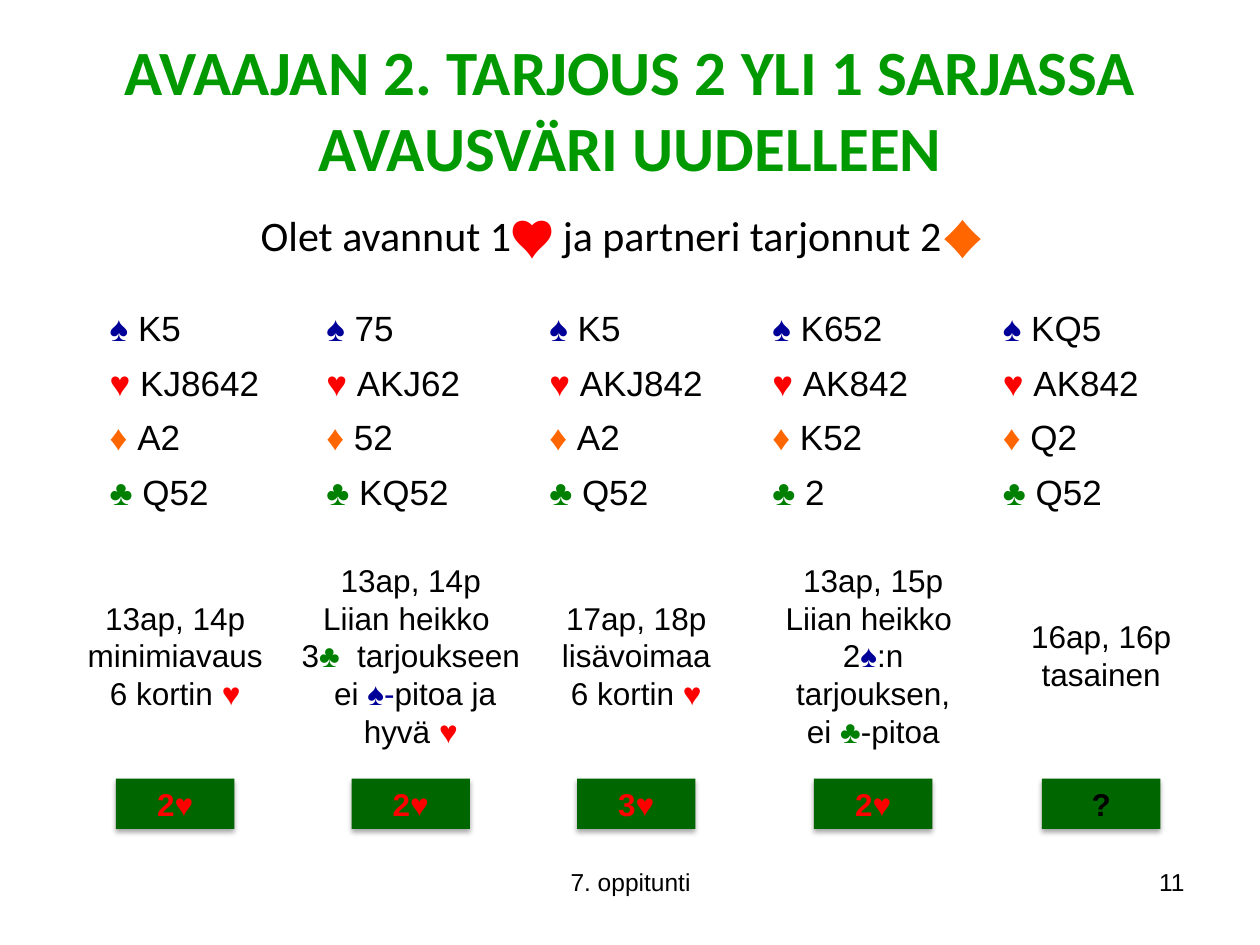
from lxml import etree
from pptx import Presentation
from pptx.dml.color import RGBColor
from pptx.enum.shapes import MSO_SHAPE
from pptx.enum.text import MSO_ANCHOR, PP_ALIGN
from pptx.oxml import parse_xml
from pptx.oxml.ns import nsdecls
from pptx.util import Inches, Pt

BLACK = RGBColor(0x00, 0x00, 0x00)
TITLE_GREEN = RGBColor(0x00, 0x99, 0x00)
BID_GREEN = RGBColor(0x00, 0x66, 0x00)
RED = RGBColor(0xFF, 0x00, 0x00)
SUIT_COLORS = {
    "♠": RGBColor(0x00, 0x00, 0x99),
    "♥": RED,
    "♦": RGBColor(0xFF, 0x66, 0x00),
    "♣": RGBColor(0x00, 0x80, 0x00),
}
BREAK = "\n"

COLUMN_WIDTHS = [1.72, 1.77, 1.77, 1.83, 1.8]
ROW_HEIGHT = 0.43

# One entry per hand: holdings by suit, centre, note width, note, bid
HANDS = [
    (["K5", "KJ8642", "A2", "Q52"], 1.39, 1.61,
     [["13ap, 14p"], ["minimiavaus"], ["6 kortin ", "♥"]], "2♥"),
    (["75", "AKJ62", "52", "KQ52"], 3.26, 2.05,
     [["13ap, 14p"],
      ["Liian heikko ", BREAK, "3", "♣  ", "tarjoukseen"],
      [" ei ", "♠-", "pitoa ja hyvä ", "♥"]], "2♥"),
    (["K5", "AKJ842", "A2", "Q52"], 5.05, 1.61,
     [["17ap, 18p"], ["lisävoimaa"], ["6 kortin ", "♥"]], "3♥"),
    (["K652", "AK842", "K52", "2"], 6.93, 1.61,
     [["13ap, 15p"],
      ["Liian heikko ", BREAK, "2", "♠", ":n tarjouksen,", BREAK,
       "ei ", "♣", "-pitoa"]], "2♥"),
    (["KQ5", "AK842", "Q2", "Q52"], 8.74, 1.61,
     [["16ap, 16p"], ["tasainen"]], "?"),
]


def write(frame, paragraphs, size, font="Arial", color=BLACK, bold=False,
          align=PP_ALIGN.CENTER):
    """Write runs; a run that starts with a suit takes the suit's colour."""
    for index, pieces in enumerate(paragraphs):
        paragraph = frame.add_paragraph() if index else frame.paragraphs[0]
        paragraph.alignment = align
        for piece in pieces:
            if piece == BREAK:
                paragraph.add_line_break()
                continue
            run = paragraph.add_run()
            run.text = piece
            run.font.name = font
            run.font.size = Pt(size)
            run.font.bold = bold
            run.font.color.rgb = SUIT_COLORS.get(piece[0], color)


def add_text(slide, left, top, width, height, paragraphs, size,
             anchor=MSO_ANCHOR.TOP, **style):
    frame = slide.shapes.add_textbox(
        Inches(left), Inches(top), Inches(width), Inches(height)).text_frame
    frame.word_wrap = True
    frame.vertical_anchor = anchor
    write(frame, paragraphs, size, **style)


def add_heading(slide, left, top, width):
    add_text(slide, left, top, width, 1.31,
             [["AVAAJAN 2. TARJOUS 2 YLI 1 SARJASSA AVAUSVÄRI UUDELLEEN"]],
             36, font="Calibri", color=TITLE_GREEN, bold=True)
    add_text(slide, left + 1.38, top + 1.4, 6.38, 0.5,
             [["Olet avannut 1", "♥", " ja partneri tarjonnut 2", "♦"]],
             24, font="Calibri", align=PP_ALIGN.LEFT)


def add_hands(slide, left, top):
    hands = slide.shapes.add_table(
        len(SUIT_COLORS), len(HANDS), Inches(left), Inches(top),
        Inches(sum(COLUMN_WIDTHS)), Inches(ROW_HEIGHT * len(SUIT_COLORS))).table
    hands.first_row = hands.horz_banding = False
    for column, width in zip(hands.columns, COLUMN_WIDTHS):
        column.width = Inches(width)
    for row_index, suit in enumerate(SUIT_COLORS):
        hands.rows[row_index].height = Inches(ROW_HEIGHT)
        for column_index, (holdings, *_) in enumerate(HANDS):
            cell = hands.cell(row_index, column_index)
            cell.fill.background()
            write(cell.text_frame, [[suit + " ", holdings[row_index]]], 20,
                  align=PP_ALIGN.JUSTIFY)


def add_bid(slide, left, top, width, height, bid):
    box = slide.shapes.add_shape(
        MSO_SHAPE.RECTANGLE, Inches(left), Inches(top), Inches(width), Inches(height))
    box.fill.solid()
    box.fill.fore_color.rgb = BID_GREEN
    box.line.fill.background()
    # Soft shadow straight below the box
    box.shadow.inherit = False
    effects = box.fill._xPr.find("{*}effectLst")
    effects.append(parse_xml(
        f'<a:outerShdw {nsdecls("a")} blurRad="{Pt(3.1)}" dist="{Pt(1.8)}" '
        'dir="5400000" rotWithShape="0"><a:srgbClr val="000000">'
        '<a:alpha val="35000"/></a:srgbClr></a:outerShdw>'))
    box.text_frame.vertical_anchor = MSO_ANCHOR.MIDDLE
    write(box.text_frame, [[bid]], 18, bold=True,
          color=RED if "♥" in bid else BLACK)


def add_answers(slide, top, bid_width=0.94):
    for _, center, note_width, note, bid in HANDS:
        add_text(slide, center - note_width / 2, top, note_width, 1.62, note, 18,
                 anchor=MSO_ANCHOR.MIDDLE)
        add_bid(slide, center - bid_width / 2, top + 1.79, bid_width, 0.4, bid)


def add_footer(slide, top, height):
    add_text(slide, 3.42, top, 3.17, height, [["7. oppitunti"]], 14)
    add_text(slide, 7.17, top, 2.33, height, [["11"]], 14, align=PP_ALIGN.RIGHT)


def main():
    deck = Presentation()
    deck.slide_width, deck.slide_height = Inches(10), Inches(7.5)
    slide = deck.slides.add_slide(deck.slide_layouts[6])
    add_heading(slide, 0.59, 0.21, 8.82)
    add_hands(slide, 0.77, 2.41)
    add_answers(slide, 4.39)
    add_footer(slide, 6.83, 0.52)
    deck.save("out.pptx")


if __name__ == "__main__":
    main()
